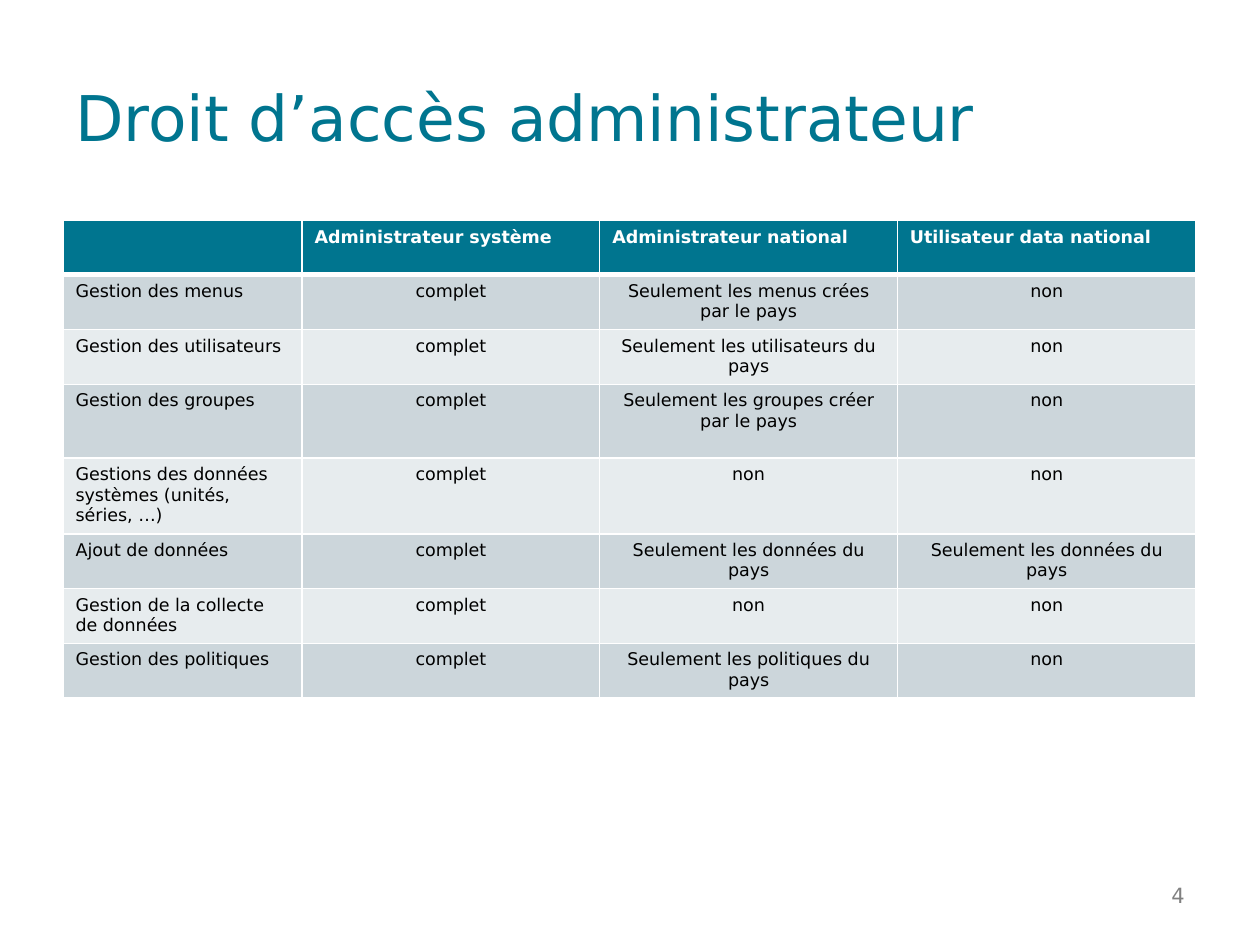
"""Build the slide of administrator access rights."""
from dataclasses import dataclass

from lxml import etree
from pptx import Presentation
from pptx import util as u
from pptx.dml.color import RGBColor
from pptx.enum import text
from pptx.oxml import ns

FONT = "DejaVu Sans"
TEAL, WHITE, BLACK, GREY = "00758F", "FFFFFF", "000000", "808080"
BANDS = ("CCD6DB", "E7ECEE")
LEFT, CENTER, RIGHT = text.PP_ALIGN.LEFT, text.PP_ALIGN.CENTER, text.PP_ALIGN.RIGHT
COL_WIDTHS = (4.82, 6.0, 6.0, 6.02)
HEADER_HEIGHT, ROW_HEIGHT, TALL_HEIGHT = 1.09, 1.08, 1.49


@dataclass
class Style:
    size: float
    color: str
    align: text.PP_ALIGN = LEFT
    bold: bool = False


@dataclass
class Label:
    words: str
    box: tuple[float, float, float, float]
    style: Style


@dataclass
class Right:
    task: str
    system: str
    national: str
    user: str
    height: float = ROW_HEIGHT


LABELS = (
    Label("Droit d’accès administrateur", (1.27, 0.76, 22.86, 3.18), Style(36, TEAL)),
    Label("4", (22.5, 17.53, 1.63, 1.02), Style(12, GREY, RIGHT)),
)
RIGHTS = (
    Right("", "Administrateur système", "Administrateur national",
          "Utilisateur data national", HEADER_HEIGHT),
    Right("Gestion des menus", "complet", "Seulement les menus crées par le pays", "non"),
    Right("Gestion des utilisateurs", "complet", "Seulement les utilisateurs du pays", "non"),
    Right("Gestion des groupes", "complet", "Seulement les groupes créer par le pays",
          "non", TALL_HEIGHT),
    Right("Gestions des données systèmes (unités, séries, …)", "complet", "non", "non",
          TALL_HEIGHT),
    Right("Ajout de données", "complet", "Seulement les données du pays",
          "Seulement les données du pays"),
    Right("Gestion de la collecte de données", "complet", "non", "non"),
    Right("Gestion des politiques", "complet", "Seulement les politiques du pays", "non"),
)


def rgb(value: str) -> RGBColor:
    return RGBColor.from_string(value)


def write(tf, words: str, style: Style) -> None:
    p = tf.paragraphs[0]
    p.alignment = style.align
    p.font.size = u.Pt(style.size)
    if not words:
        return
    r = p.add_run()
    r.text = words
    r.font.name = FONT
    r.font.size = u.Pt(style.size)
    r.font.bold = style.bold
    r.font.color.rgb = rgb(style.color)


def add_label(s, label: Label) -> None:
    sp = s.shapes.add_textbox(*map(u.Cm, label.box))
    tf = sp.text_frame
    tf.word_wrap = True
    tf.vertical_anchor = text.MSO_ANCHOR.MIDDLE
    write(tf, label.words, label.style)


def set_borders(cell, top: float, bottom: float) -> None:
    tc_pr = cell._tc.get_or_add_tcPr()
    widths = {"L": 1, "R": 1, "T": top, "B": bottom}
    for i, (side, width) in enumerate(widths.items()):
        ln = etree.Element(ns.qn(f"a:ln{side}"), w=str(u.Pt(width)))
        fill = etree.SubElement(ln, ns.qn("a:solidFill"))
        etree.SubElement(fill, ns.qn("a:srgbClr"), val=WHITE)
        tc_pr.insert(i, ln)


def fill_cell(cell, words: str, row: int, col: int) -> None:
    header = row == 0
    if header:
        style = Style(10, WHITE, bold=True)
    else:
        style = Style(10, BLACK, CENTER if col else LEFT)
    write(cell.text_frame, words, style)
    cell.fill.solid()
    cell.fill.fore_color.rgb = rgb(TEAL if header else BANDS[(row - 1) % 2])
    set_borders(cell, 3 if row == 1 else 1, 3 if header else 1)


def add_rights_table(s, rights: tuple[Right, ...]) -> None:
    width, height = sum(COL_WIDTHS), sum(right.height for right in rights)
    frame = s.shapes.add_table(len(rights), len(COL_WIDTHS), u.Cm(1.27), u.Cm(4.45),
                               u.Cm(width), u.Cm(height))
    table = frame.table
    for column, col_width in zip(table.columns, COL_WIDTHS):
        column.width = u.Cm(col_width)
    for row, right in enumerate(rights):
        table.rows[row].height = u.Cm(right.height)
        for col, words in enumerate((right.task, right.system, right.national, right.user)):
            fill_cell(table.cell(row, col), words, row, col)


def main() -> None:
    prs = Presentation()
    prs.slide_width, prs.slide_height = u.Cm(25.4), u.Cm(19.05)
    s = prs.slides.add_slide(prs.slide_layouts[6])
    title, page_number = LABELS
    add_label(s, title)
    add_rights_table(s, RIGHTS)
    add_label(s, page_number)
    prs.save("out.pptx")


if __name__ == "__main__":
    main()
